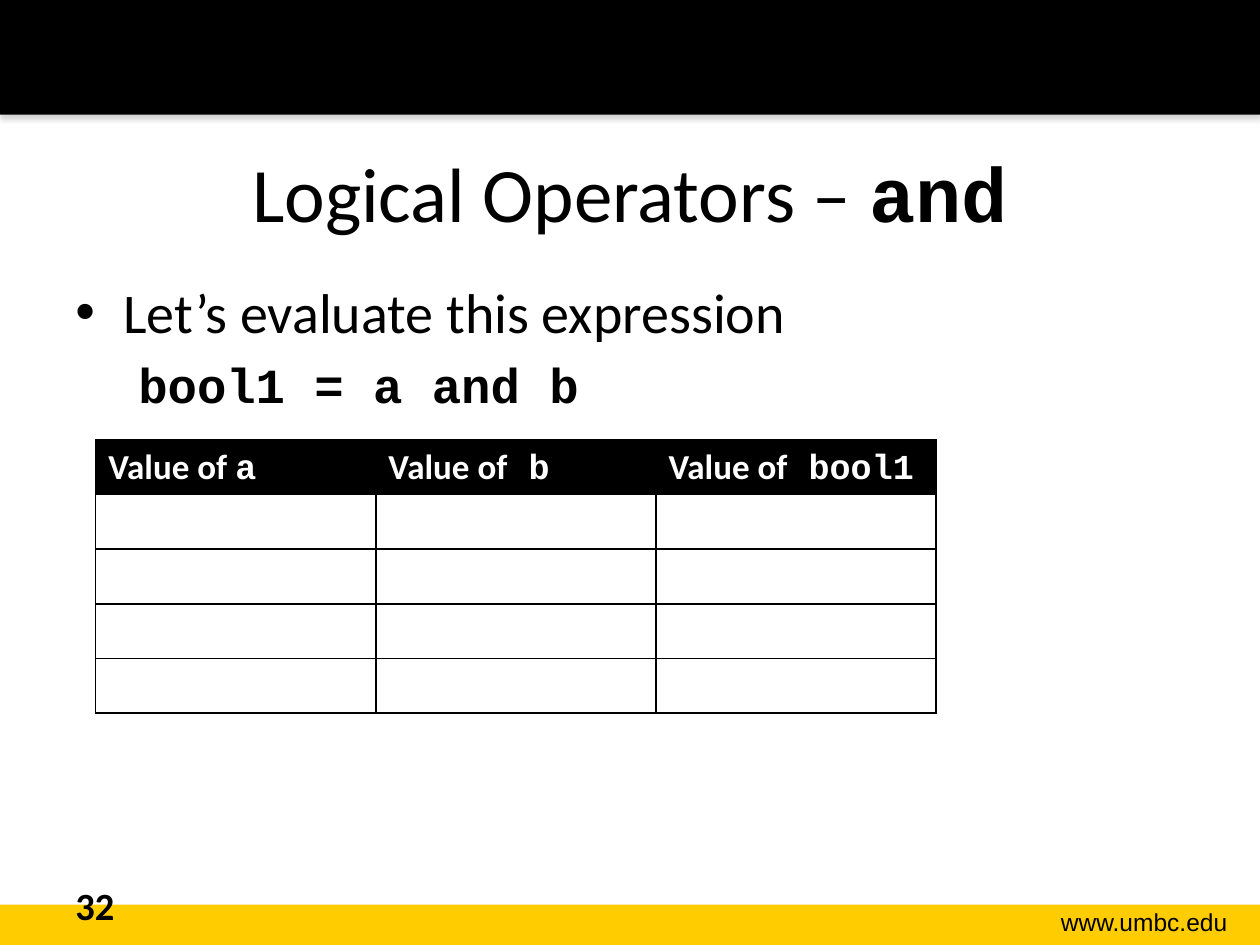
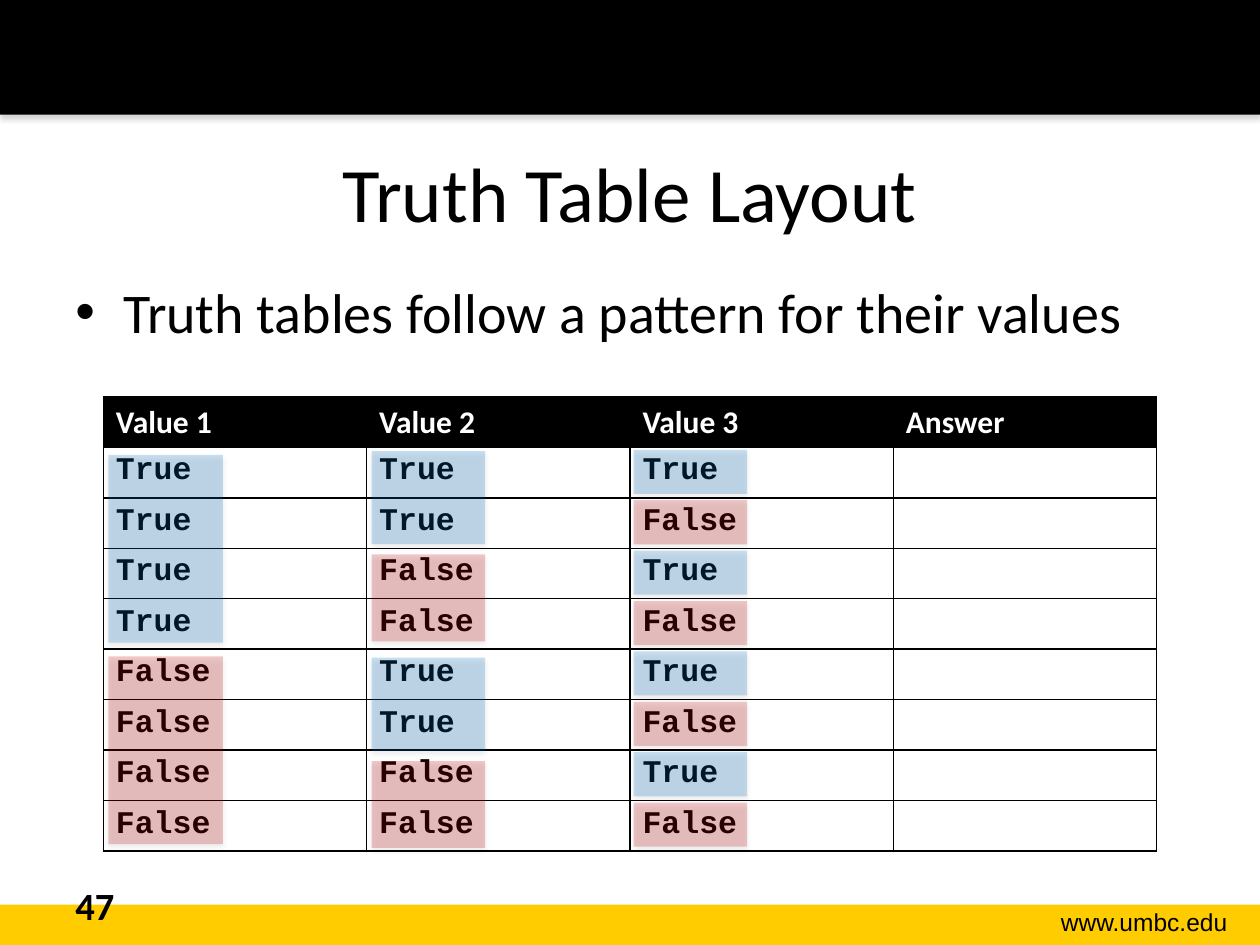
from dataclasses import dataclass
from itertools import product

from lxml import etree
from pptx import Presentation
from pptx.dml.color import RGBColor
from pptx.enum.shapes import MSO_SHAPE
from pptx.enum.text import MSO_ANCHOR, PP_ALIGN
from pptx.oxml.ns import qn
from pptx.util import Inches, Pt

RECT = MSO_SHAPE.RECTANGLE
LEFT, CENTER, RIGHT = PP_ALIGN.LEFT, PP_ALIGN.CENTER, PP_ALIGN.RIGHT
TOP, MIDDLE = MSO_ANCHOR.TOP, MSO_ANCHOR.MIDDLE
TITLE_ONLY = 5

BLACK, WHITE, GOLD, GREY = "000000", "FFFFFF", "FFCC00", "808080"
BLUE, RED = "0070C0", "C00000"
BODY, CODE, FOOTER = "Calibri", "Courier New", "Arial"


@dataclass(frozen=True)
class Run:
    text: str
    size: float
    font: str = BODY
    bold: bool = False
    color: str = BLACK


@dataclass(frozen=True)
class Box:
    left: float
    top: float
    width: float
    height: float

    def emu(self):
        return [Inches(v) for v in (self.left, self.top, self.width, self.height)]


@dataclass(frozen=True)
class HighlightColumn:
    left: float
    top: float
    width: float
    pitch: float
    count: int
    heights: tuple[float, float]  # True bars, False bars


TITLE_BOX = Box(0.5, 0.9, 9, 1.25)
BODY_BOX = Box(0.5, 2.15, 9, 4.55)
NUMBER_BOX = Box(0.5, 6.95, 2.33, 0.4)
URL_BOX = Box(7.85, 7.15, 1.99, 0.34)
TOP_BAND = Box(0, 0, 10, 0.91)
BOTTOM_BAND = Box(0, 7.18, 10, 0.32)


def rgb(color: str) -> RGBColor:
    return RGBColor.from_string(color)


# Text
def add_run(p, run: Run) -> None:
    r = p.add_run()
    r.text = run.text
    r.font.name, r.font.size, r.font.bold = run.font, Pt(run.size), run.bold
    r.font.color.rgb = rgb(run.color)


def add_runs(p, runs: list[Run], align=LEFT) -> None:
    p.alignment = align
    for run in runs:
        add_run(p, run)


def add_text(slide, box: Box, runs: list[Run], align=LEFT):
    tf = slide.shapes.add_textbox(*box.emu()).text_frame
    tf.word_wrap = True
    tf.vertical_anchor = TOP
    add_runs(tf.paragraphs[0], runs, align)
    return tf


def set_indent(p, margin: float, indent: float, bullet: str = "") -> None:
    pPr = p._p.get_or_add_pPr()
    pPr.set("marL", str(Inches(margin)))
    pPr.set("indent", str(Inches(indent)))
    if bullet:
        etree.SubElement(pPr, qn("a:buFont"), typeface=FOOTER)
        etree.SubElement(pPr, qn("a:buChar"), char=bullet)


def add_body(slide, bullet: str, code: str = "") -> None:
    tf = add_text(slide, BODY_BOX, [Run(bullet, 32)])
    set_indent(tf.paragraphs[0], 0.38, -0.38, "•")
    if code:
        p = tf.add_paragraph()
        set_indent(p, 0.5, 0)
        p.space_before = Pt(5.6)
        add_runs(p, [Run(code, 28, CODE, True)])


# Rectangles
def add_rect(slide, box: Box, color: str, shadow: str = "", alpha: int = 100) -> None:
    sp = slide.shapes.add_shape(RECT, *box.emu())
    sp.shadow.inherit = False
    sp.fill.solid()
    sp.fill.fore_color.rgb = rgb(color)
    sp.line.fill.background()
    spPr = sp._element.spPr
    if alpha < 100:
        set_alpha(spPr.find(qn("a:solidFill"))[0], alpha)
    if shadow:
        outer = etree.SubElement(
            spPr.find(qn("a:effectLst")), qn("a:outerShdw"), blurRad=str(Pt(3.1)),
            dist=str(Pt(1.8)), dir="5400000", rotWithShape="0")
        set_alpha(etree.SubElement(outer, qn("a:srgbClr"), val=shadow), 35)


def set_alpha(clr, percent: int) -> None:
    etree.SubElement(clr, qn("a:alpha"), val=str(percent * 1000))


# Tables
def set_borders(cell) -> None:
    tcPr = cell._tc.get_or_add_tcPr()
    for i, side in enumerate(("lnL", "lnR", "lnT", "lnB")):
        ln = etree.Element(qn(f"a:{side}"), w=str(Pt(1)))
        fill = etree.SubElement(ln, qn("a:solidFill"))
        etree.SubElement(fill, qn("a:srgbClr"), val=BLACK)
        tcPr.insert(i, ln)


def set_empty_font(p, size: int) -> None:
    end = etree.SubElement(p._p, qn("a:endParaRPr"), sz=str(size * 100), b="1")
    for tag in ("latin", "cs"):
        etree.SubElement(end, qn(f"a:{tag}"), typeface=CODE)


def add_grid(slide, box: Box, rows: list[list[list[Run]]], row_height: float, size: int) -> None:
    n_cols = len(rows[0])
    table = slide.shapes.add_table(len(rows), n_cols, *box.emu()).table
    table.first_row = table.horz_banding = False
    for col in table.columns:
        col.width = Inches(box.width / n_cols)
    for i, row in enumerate(rows):
        table.rows[i].height = Inches(row_height)
        for j, runs in enumerate(row):
            cell = table.cell(i, j)
            if i == 0:
                cell.fill.solid()
                cell.fill.fore_color.rgb = rgb(BLACK)
            else:
                cell.fill.background()
            set_borders(cell)
            p = cell.text_frame.paragraphs[0]
            if runs:
                add_runs(p, runs)
            else:
                set_empty_font(p, size)


def header(text: str, size: int, font: str = BODY) -> Run:
    return Run(text, size, font, True, WHITE)


# Shared slide frame
def new_slide(prs, title: list[Run], number: str):
    slide = prs.slides.add_slide(prs.slide_layouts[TITLE_ONLY])
    add_rect(slide, BOTTOM_BAND, GOLD)
    add_rect(slide, TOP_BAND, BLACK, GREY)
    add_text(slide, URL_BOX, [Run("www.umbc.edu", 14, FOOTER)], RIGHT)
    add_text(slide, NUMBER_BOX, [Run(number, 22, bold=True)])
    sp = slide.shapes.title
    sp.left, sp.top, sp.width, sp.height = TITLE_BOX.emu()
    sp.text_frame.vertical_anchor = MIDDLE
    add_runs(sp.text_frame.paragraphs[0], title, CENTER)
    return slide


def build_and_slide(prs) -> None:
    slide = new_slide(prs, [Run("Logical Operators – ", 44), Run("and", 44, CODE, True)], "32")
    add_body(slide, "Let’s evaluate this expression", "bool1 = a and b")
    labels = [("Value of ", "a"), ("Value of", " b"), ("Value of", " bool1")]
    head = [[header(words, 20), header(name, 20, CODE)] for words, name in labels]
    blank_rows = [[[] for _ in labels] for _ in range(4)]
    add_grid(slide, Box(0.76, 3.49, 6.67, 2.17), [head] + blank_rows, 0.41, 20)


def build_truth_table_slide(prs) -> None:
    slide = new_slide(prs, [Run("Truth Table Layout", 44)], "47")
    add_body(slide, "Truth tables follow a pattern for their values")
    head = [[header(t, 18)] for t in ("Value 1", "Value 2", "Value 3", "Answer")]
    value_rows = [[[Run(v, 18, CODE, True)] for v in values] + [[]]
                  for values in product(("True", "False"), repeat=3)]
    add_grid(slide, Box(0.82, 3.15, 8.36, 3.6), [head] + value_rows, 0.35, 18)

    # Bars that mark the alternating runs of True and False
    columns = [
        HighlightColumn(0.86, 3.61, 0.91, 1.6, 2, (1.49, 1.49)),
        HighlightColumn(2.95, 3.58, 0.9, 0.82, 4, (0.74, 0.69)),
        HighlightColumn(5.03, 3.57, 0.9, 0.4, 8, (0.35, 0.35)),
    ]
    for col in columns:
        for i in range(col.count):
            bar = Box(col.left, col.top + i * col.pitch, col.width, col.heights[i % 2])
            add_rect(slide, bar, (BLUE, RED)[i % 2], BLACK, 21)


def main() -> None:
    prs = Presentation()
    prs.slide_width, prs.slide_height = Inches(10), Inches(7.5)
    build_and_slide(prs)
    build_truth_table_slide(prs)
    prs.save("out.pptx")


if __name__ == "__main__":
    main()
